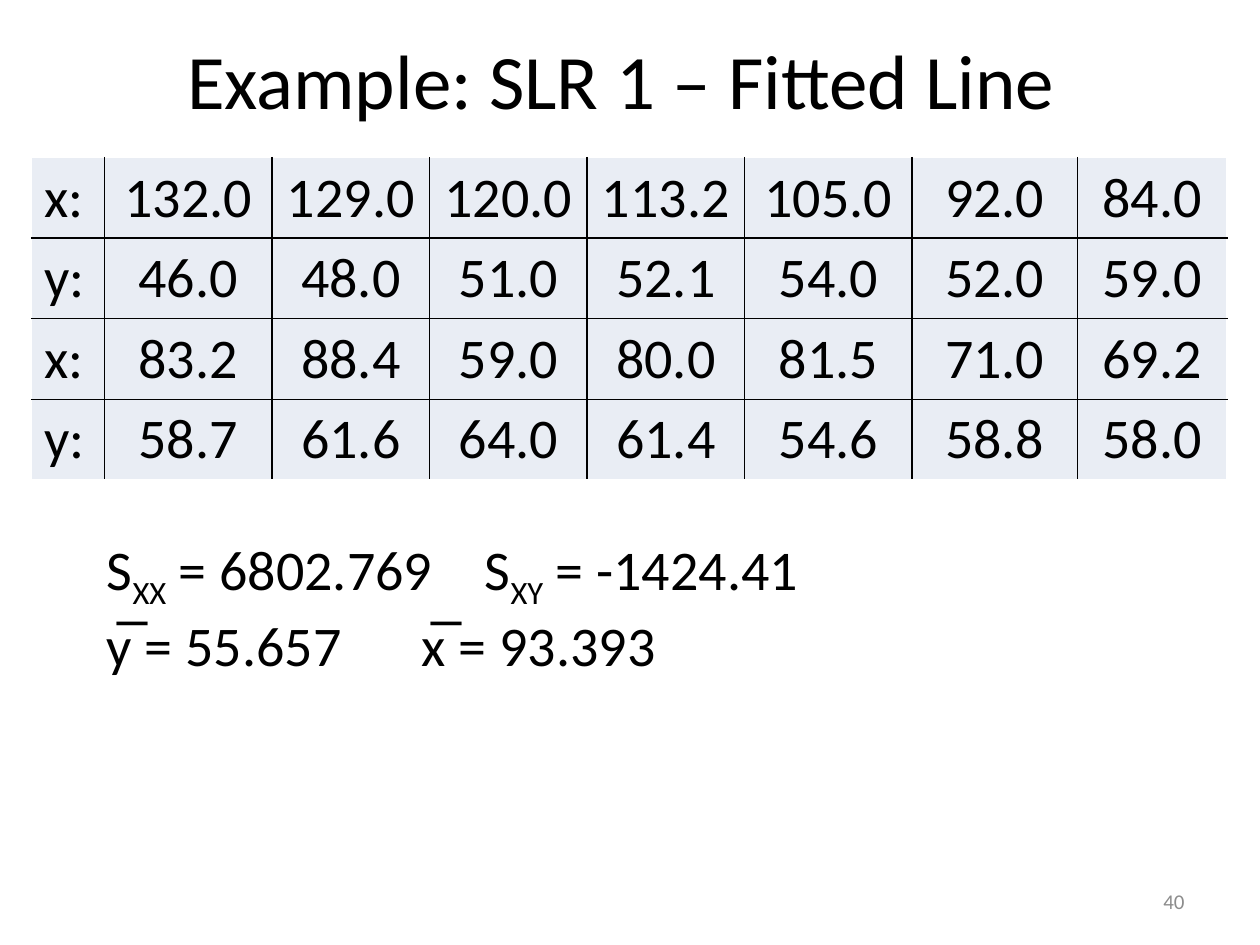
import pptx
import pptx.util
import pptx.dml.color
import pptx.enum.text
import lxml.etree
from pptx.util import Inches

COLORS = {"ink": "000000", "cell": "E9EDF4", "edge": "FFFFFF", "number": "8C8C8C"}
ALIGN = pptx.enum.text.PP_ALIGN
MIDDLE = pptx.enum.text.MSO_ANCHOR.MIDDLE
DRAWING = "{http://schemas.openxmlformats.org/drawingml/2006/main}"


def style(para, size, color="ink", align=ALIGN.LEFT):
    para.font.name = "Calibri"
    para.font.size = pptx.util.Pt(size)
    para.font.color.rgb = pptx.dml.color.RGBColor.from_string(COLORS[color])
    para.alignment = align


def add_box(left, top, width, height):
    frame = page.shapes.add_textbox(
        Inches(left), Inches(top), Inches(width), Inches(height)).text_frame
    frame.word_wrap = True
    return frame


deck = pptx.Presentation()
deck.slide_width, deck.slide_height = Inches(10), Inches(7.5)
page = deck.slides.add_slide(deck.slide_layouts[6])

for text, place, size, color, align in [
    ("Example: SLR 1 – Fitted Line ", (0.5, 0, 9, 1.25), 44, "ink", ALIGN.CENTER),
    ("40", (7.17, 6.95, 2.33, 0.4), 12, "number", ALIGN.RIGHT),
]:
    frame = add_box(*place)
    frame.vertical_anchor = MIDDLE
    frame.text = text
    style(frame.paragraphs[0], size, color, align)

rows = [
    ["x:", "132.0", "129.0", "120.0", "113.2", "105.0", "92.0", "84.0"],
    ["y:", "46.0", "48.0", "51.0", "52.1", "54.0", "52.0", "59.0"],
    ["x:", "83.2", "88.4", "59.0", "80.0", "81.5", "71.0", "69.2"],
    ["y:", "58.7", "61.6", "64.0", "61.4", "54.6", "58.8", "58.0"],
]
widths = [0.58, 1.33, 1.25, 1.25, 1.25, 1.33, 1.31, 1.19]
row_height = 0.64
last_row, last_column = len(rows) - 1, len(widths) - 1
table = page.shapes.add_table(
    len(rows), len(widths), Inches(0.25), Inches(1.25),
    Inches(sum(widths)), Inches(row_height * len(rows))).table
for column, width in zip(table.columns, widths):
    column.width = Inches(width)
for r, values in enumerate(rows):
    table.rows[r].height = Inches(row_height)
    for c, value in enumerate(values):
        cell = table.cell(r, c)
        cell.text = value
        style(cell.text_frame.paragraphs[0], 32, align=ALIGN.CENTER if c else ALIGN.LEFT)
        if c:
            cell.vertical_anchor = MIDDLE
        properties = cell._tc.get_or_add_tcPr()
        outer_sides = {"lnL": c == 0, "lnR": c == last_column,
                       "lnT": r == 0, "lnB": r == last_row}
        for side, outer in outer_sides.items():
            line = lxml.etree.SubElement(properties, DRAWING + side, w="12700")
            fill = lxml.etree.SubElement(line, DRAWING + "solidFill")
            lxml.etree.SubElement(fill, DRAWING + "srgbClr",
                                  val=COLORS["edge" if outer else "ink"])
        cell.fill.solid()
        cell.fill.fore_color.rgb = pptx.dml.color.RGBColor.from_string(COLORS["cell"])

summary = add_box(0.75, 4.19, 8.25, 1.18)
sums = summary.paragraphs[0]
for text, subscript in [("S", False), ("XX", True), (" = 6802.769\tS", False),
                        ("XY", True), (" = -1424.41", False)]:
    span = sums.add_run()
    span.text = text
    if subscript:
        span._r.get_or_add_rPr().set("baseline", "-25000")
means = summary.add_paragraph()
means.text = "y\u0305 = 55.657\t\tx\u0305 = 93.393"
for para in summary.paragraphs:
    style(para, 32)

deck.save("out.pptx")
